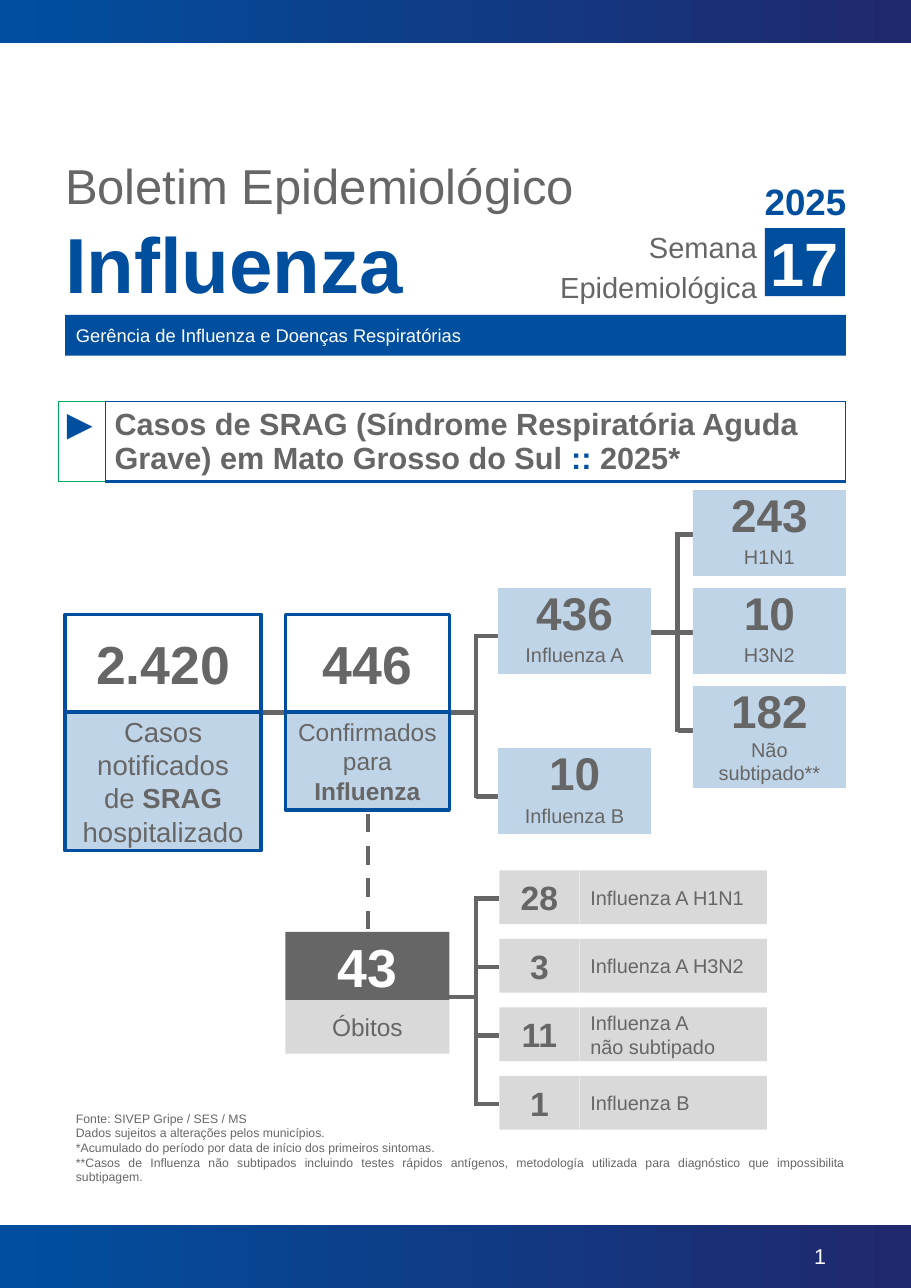
"""Builds the cover page of an epidemiological bulletin on influenza."""
from dataclasses import dataclass

from lxml import etree
from pptx import Presentation
from pptx import util as u
from pptx.dml.color import RGBColor
from pptx.enum import dml, shapes, text
from pptx.oxml import ns

Cm = u.Cm
LEFT, CENTER, RIGHT, JUSTIFY = (text.PP_ALIGN.LEFT, text.PP_ALIGN.CENTER,
                                text.PP_ALIGN.RIGHT, text.PP_ALIGN.JUSTIFY)
TOP, MIDDLE = text.MSO_ANCHOR.TOP, text.MSO_ANCHOR.MIDDLE
PAD = 0.25


@dataclass(frozen=True)
class Theme:
    """Colours, font and type sizes of the bulletin."""
    font: str = "Arial"
    blue: str = "004F9F"
    navy: str = "20286D"
    sky: str = "C0D4E7"
    green: str = "00A859"
    gray: str = "666666"
    silver: str = "D9D9D9"
    white: str = "FFFFFF"
    note: int = 8
    band: int = 12
    label: int = 13
    page: int = 14
    caption: int = 16
    notified: int = 18
    week: int = 19
    heading: int = 20
    row: int = 22
    year: int = 24
    arrow: int = 28
    count: int = 30
    title: int = 32
    total: int = 35
    number: int = 40
    name: int = 51


T = Theme()


def rgb(code):
    """Return the colour for a hex code."""
    return RGBColor.from_string(code)


def write(tf, copy, size, color=T.gray, bold=False, align=CENTER, accent=None, spacing=None):
    """Write lines of text; every second part between bars is emphasised."""
    for i, line in enumerate(copy.split("\n")):
        p = tf.add_paragraph() if i else tf.paragraphs[0]
        p.alignment = align
        if spacing:
            p.line_spacing = spacing
        for j, part in enumerate(line.split("|")):
            r = p.add_run()
            r.text = part
            r.font.name, r.font.size = T.font, u.Pt(size)
            r.font.bold = bold or j % 2 == 1
            r.font.color.rgb = rgb(accent if accent and j % 2 else color)


def frame(sp, copy, size, pads=(PAD,) * 4, anchor=MIDDLE, **style):
    """Set the margins and anchor of a shape and write its text."""
    tf = sp.text_frame
    tf.word_wrap, tf.vertical_anchor = True, anchor
    tf.margin_left, tf.margin_top, tf.margin_right, tf.margin_bottom = map(Cm, pads)
    write(tf, copy, size, **style)


def label(s, box, copy, size, **style):
    """Add a text box."""
    frame(s.shapes.add_textbox(*map(Cm, box)), copy, size, **style)


def rect(s, box, fill=None, line=None):
    """Add a flat rectangle."""
    sp = s.shapes.add_shape(shapes.MSO_SHAPE.RECTANGLE, *map(Cm, box))
    sp.shadow.inherit = False
    if fill:
        sp.fill.solid()
        sp.fill.fore_color.rgb = rgb(fill)
    else:
        sp.fill.background()
    if line:
        sp.line.color.rgb, sp.line.width = rgb(line), u.Pt(2.25)
    else:
        sp.line.fill.background()
    return sp


def gradient_bar(s, box):
    """Add a page bar that runs from blue to navy."""
    sp = rect(s, box)
    sp.fill.gradient()
    sp.fill.gradient_angle = 0
    for stop, color in zip(sp.fill.gradient_stops, (T.blue, T.navy)):
        stop.color.rgb = rgb(color)


def link(s, x1, y1, x2, y2, dashed=False):
    """Add a gray connecting line."""
    c = s.shapes.add_connector(shapes.MSO_CONNECTOR.STRAIGHT, *map(Cm, (x1, y1, x2, y2)))
    c.line.color.rgb, c.line.width = rgb(T.gray), u.Pt(3)
    if dashed:
        c.line.dash_style = dml.MSO_LINE.DASH
    etree.SubElement(c._element.spPr, ns.qn("a:effectLst"))


def branch(s, start, stem_y, ends, end_x):
    """Link a stem to several ends through a vertical spine."""
    spine = start + 0.61
    link(s, start, stem_y, spine, stem_y)
    link(s, spine, ends[0] - 0.05, spine, ends[-1] + 0.05)
    for y in ends:
        link(s, spine, y, end_x, y)


def card(s, box, split, value, caption, sizes, fills, line=None, color=T.gray):
    """Stack a bold value above its caption, divided at the split height."""
    x, y, w, h = box
    frame(rect(s, (x, y, w, split), fills[0], line), value, sizes[0], bold=True, color=color)
    frame(rect(s, (x, y + split, w, h - split), fills[1], line), caption, sizes[1])


def masthead(s, box):
    """Place the bulletin title, week and department band."""
    x, y, w, h = box
    flush = (0, 0, 0, 0)
    label(s, (x, y, 13.9, 1.45), "Boletim Epidemiológico", T.title,
          pads=flush, anchor=TOP, align=LEFT)
    label(s, (x, y + 1.4, 9, 1.85), "Influenza", T.name, pads=flush, anchor=TOP,
          align=LEFT, bold=True, color=T.blue)
    label(s, (x + w - 6.65, y + 1.6, 4.85, 1.85), "Semana\nEpidemiológica", T.week,
          pads=(0, 0, PAD, 0), anchor=TOP, align=RIGHT, spacing=1.15)
    label(s, (x + w - 2.15, y + 0.43, 2.44, 1.24), "2025", T.year, bold=True, color=T.blue)
    frame(rect(s, (x + w - 1.87, y + 1.68, 1.85, 1.57), T.blue), "17", T.number,
          pads=flush, bold=True, color=T.white)
    frame(rect(s, (x, y + h - 0.94, w, 0.94), T.blue),
          "Gerência de Influenza e Doenças Respiratórias", T.band,
          pads=(PAD, 0, PAD, 0), align=LEFT, color=T.white)


def heading(s, box):
    """Place the section heading as a bordered table with an arrow cell."""
    table = s.shapes.add_table(1, 2, *map(Cm, box)).table
    table.first_row = table.horz_banding = False
    arrow_w = 1.09
    table.columns[0].width, table.columns[1].width = Cm(arrow_w), Cm(box[2] - arrow_w)
    title = ("Casos de SRAG (Síndrome Respiratória Aguda Grave) "
             "em Mato Grosso do Sul |::| 2025*")
    g, b = (T.green, 0.75), (T.blue, 0.75)
    cells = [("►", T.arrow, T.blue, False, (0, 0), (g, b, g, g)),
             (title, T.heading, T.gray, True, (0.2, 0.15), (b, b, b, (T.blue, 2.25)))]
    for cell, (copy, size, color, bold, pads, edges) in zip(table.rows[0].cells, cells):
        cell.margin_left, cell.margin_top = map(Cm, pads)
        cell.margin_right = cell.margin_bottom = 0
        write(cell.text_frame, copy, size, color, bold, LEFT, T.blue)
        tc_pr = cell._tc.get_or_add_tcPr()
        for side, (edge, width) in zip("LRTB", edges):
            ln = etree.SubElement(tc_pr, ns.qn(f"a:ln{side}"), w=str(u.Pt(width)))
            fill = etree.SubElement(ln, ns.qn("a:solidFill"))
            etree.SubElement(fill, ns.qn("a:srgbClr"), val=edge)
        cell.fill.background()


def cases(s, box):
    """Place the tree from notified cases to influenza subtypes."""
    x, y, w, h = box
    row, card_w, split, pitch = 1.98, 3.53, 1.11, 2.26
    type_x, sub_x = x + 9.98, x + w - card_w
    total_y, joint = y + 2.87, y + 5.13
    type_ys = [y + pitch, y + 5.95]
    sub_ys = [y + pitch * i for i in range(3)]
    link(s, x + 4.52, joint, x + 5.08, joint)
    branch(s, x + 8.86, joint, [t + split for t in type_ys], type_x)
    branch(s, type_x + card_w, sub_ys[1] + 1.03, [t + 1.02 for t in sub_ys], sub_x)
    sky = (T.sky, T.sky)
    for top, value, name in zip(type_ys, ("436", "10"), ("Influenza A", "Influenza B")):
        card(s, (type_x, top, card_w, row), split, value, name, (T.count, T.label), sky)
    subtypes = [("243", "H1N1", row), ("10", "H3N2", row), ("182", "Não subtipado**", 2.35)]
    for top, (value, name, height) in zip(sub_ys, subtypes):
        card(s, (sub_x, top, card_w, height), split, value, name, (T.count, T.label), sky)
    totals = [(x, 4.52, 5.45, "2.420", "Casos\nnotificados\nde |SRAG|\nhospitalizado", T.notified),
              (x + 5.08, 3.78, 4.51, "446", "Confirmados\npara |Influenza", T.caption)]
    for left, width, height, value, name, size in totals:
        card(s, (left, total_y, width, height), 2.25, value, name, (T.total, size),
             (None, T.sky), line=T.blue)


def deaths(s, box):
    """Place the deaths total and its breakdown by virus type."""
    x, y, w, h = box
    row, pitch, value_w, row_x = 1.24, 1.58, 1.85, x + 4.93
    tops = [y + pitch * i for i in range(4)]
    link(s, x + 1.9, y - 1.3, x + 1.9, y + 1.42, dashed=True)
    branch(s, x + 3.78, y + 2.92, [t + 0.65 for t in tops], row_x)
    card(s, (x, y + 1.42, 3.78, 2.81), 1.57, "43", "Óbitos", (T.total, T.caption),
         (T.gray, T.silver), color=T.white)
    rows = [("28", "Influenza A H1N1"), ("3", "Influenza A H3N2"),
            ("11", "Influenza A\nnão subtipado"), ("1", "Influenza B")]
    for top, (value, name) in zip(tops, rows):
        frame(rect(s, (row_x, top, value_w, row), T.silver), value, T.row, bold=True)
        frame(rect(s, (row_x + value_w, top, x + w - row_x - value_w, row), T.silver),
              name, T.label, align=LEFT)


def footnotes(s, box):
    """Place the source and the notes."""
    label(s, box, "Fonte: SIVEP Gripe / SES / MS\n"
          "Dados sujeitos a alterações pelos municípios.\n"
          "*Acumulado do período por data de início dos primeiros sintomas.\n"
          "**Casos de Influenza não subtipados incluindo testes rápidos antígenos, "
          "metodología utilizada para diagnóstico que impossibilita subtipagem.",
          T.note, align=JUSTIFY)


def main():
    """Build and save the bulletin page."""
    prs = Presentation()
    prs.slide_width, prs.slide_height = Cm(21), Cm(29.7)
    s = prs.slides.add_slide(prs.slide_layouts[6])
    gradient_bar(s, (0, 0, 21, 1))
    gradient_bar(s, (0, 28.24, 21, 1.46))
    label(s, (18.52, 28.24, 1.27, 1.5 - 0.04), "1", T.page, align=LEFT, color=T.white)
    masthead(s, (1.5, 3.58, 18, 4.62))
    heading(s, (1.35, 9.25, 18.13, 1.73))
    cases(s, (1.5, 11.3, 18, 8.35))
    deaths(s, (6.58, 20.07, 11.1, 5.98))
    footnotes(s, (1.5, 25.68, 18.25, 1.57))
    prs.save("out.pptx")


if __name__ == "__main__":
    main()
